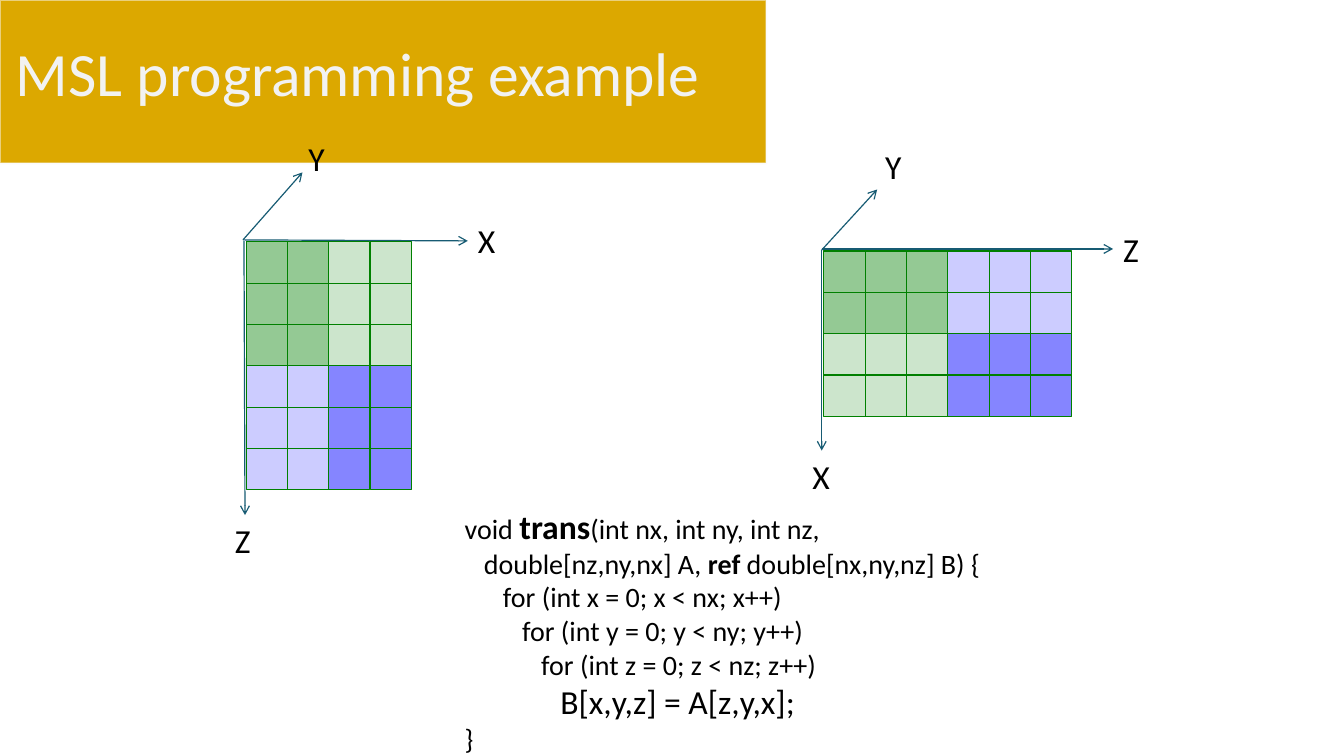
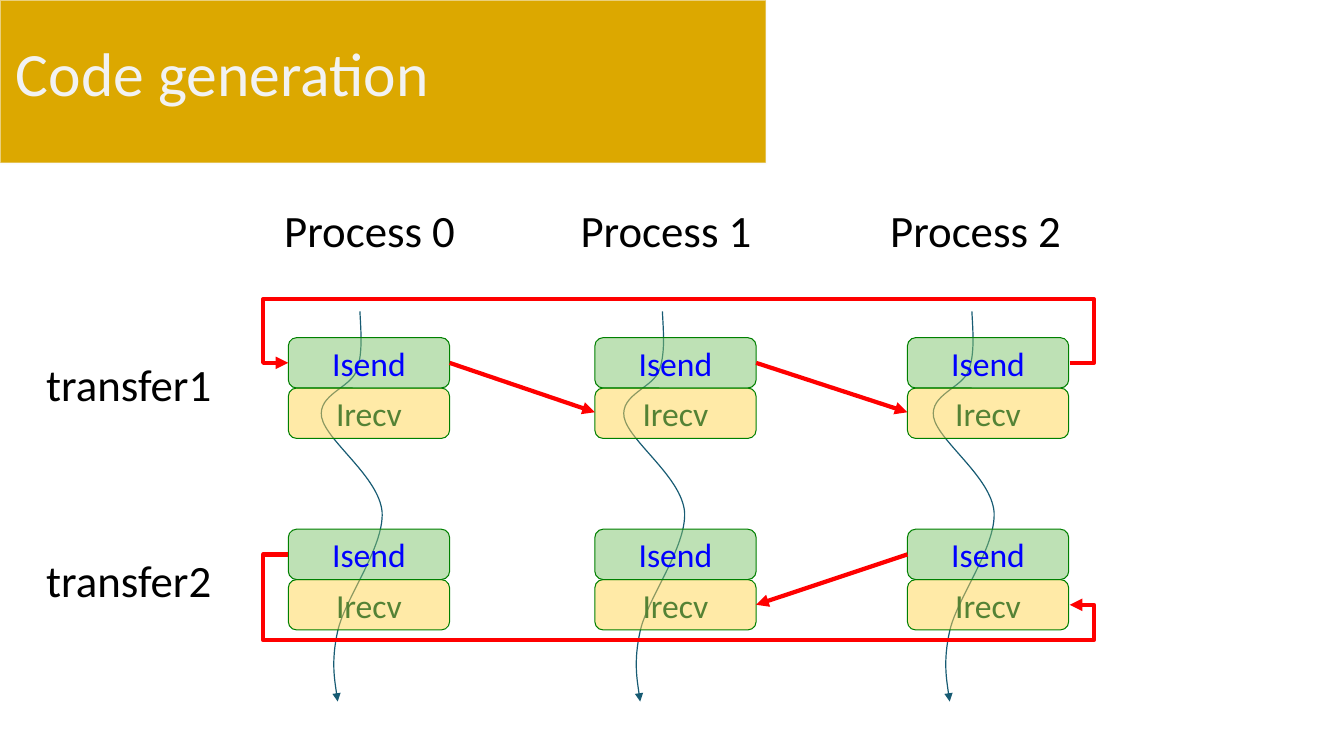
"""Build two slides: a matrix transposition example and its generated communication."""
from dataclasses import dataclass
from itertools import product

from lxml.etree import SubElement
from pptx import Presentation
from pptx.dml.color import RGBColor
from pptx.dml.line import LineFormat
from pptx.enum.shapes import MSO_CONNECTOR, MSO_SHAPE
from pptx.enum.text import MSO_ANCHOR, PP_ALIGN
from pptx.oxml.ns import qn
from pptx.presentation import Presentation as Deck
from pptx.shapes.autoshape import Shape
from pptx.slide import Slide
from pptx.text.text import TextFrame, _Paragraph
from pptx.util import Inches, Pt

GOLD = RGBColor(0xDC, 0xA8, 0x00)
BAND_EDGE = RGBColor(0xF9, 0xF9, 0xF9)
TITLE = RGBColor(0xF2, 0xF2, 0xF2)
WHITE = RGBColor(0xFF, 0xFF, 0xFF)
BLACK = RGBColor(0x00, 0x00, 0x00)
GREEN = RGBColor(0x00, 0x80, 0x00)
BLUE = RGBColor(0x00, 0x00, 0xFF)
TEAL = RGBColor(0x17, 0x5B, 0x73)
RED = RGBColor(0xFF, 0x00, 0x00)
SEND_FILL = RGBColor(0x7F, 0xC4, 0x6C)
RECV_FILL = RGBColor(0xFF, 0xD6, 0x51)
RECV_TEXT = RGBColor(0x54, 0x82, 0x35)

FONT = "Calibri"
CELL = 0.41
INDENT = 0.19
BOX_W, BOX_H = 1.6, 0.5
LOOP_LEFT, LOOP_RIGHT = 2.61, 10.85

Point = tuple[float, float]


@dataclass(frozen=True)
class Shade:
    """Fill colour with opacity in percent."""
    color: RGBColor
    opacity: int


@dataclass(frozen=True)
class Axis:
    """Labelled axis arrow; label is the top left corner of its text."""
    name: str
    start: Point
    end: Point
    label: Point


@dataclass(frozen=True)
class Matrix:
    """Two by two blocks of cells, each block with one shade."""
    left: float
    top: float
    block_cols: int
    block_rows: int
    shades: tuple[tuple[Shade, Shade], tuple[Shade, Shade]]
    axes: tuple[Axis, ...]


@dataclass(frozen=True)
class Span:
    """Piece of a text line with one format."""
    text: str
    size: int = 20
    bold: bool = False


@dataclass(frozen=True)
class Process:
    """Column of calls with its heading and thread curve."""
    label_left: float
    box_left: float
    curve_left: float


@dataclass(frozen=True)
class Call:
    """Kind of communication call."""
    name: str
    fill: RGBColor
    color: RGBColor


STRONG_GREEN, PALE_GREEN = Shade(GREEN, 42), Shade(GREEN, 20)
STRONG_BLUE, PALE_BLUE = Shade(BLUE, 48), Shade(BLUE, 20)

MATRICES = (
    Matrix(8.17, 2.49, 3, 2, ((STRONG_GREEN, PALE_BLUE), (PALE_GREEN, STRONG_BLUE)), (
        Axis("Z", (8.15, 2.47), (11.04, 2.47), (11.04, 2.22)),
        Axis("X", (8.15, 2.48), (8.15, 4.47), (7.96, 4.47)),
        Axis("Y", (8.15, 2.48), (8.7, 1.88), (8.68, 1.4)))),
    Matrix(2.44, 2.4, 2, 3, ((STRONG_GREEN, PALE_GREEN), (PALE_BLUE, STRONG_BLUE)), (
        Axis("X", (2.41, 2.38), (4.64, 2.39), (4.64, 2.13)),
        Axis("Z", (2.42, 2.39), (2.43, 5.11), (2.23, 5.11)),
        Axis("Y", (2.41, 2.38), (3, 1.71), (2.96, 1.32)))),
)

CODE = (
    (0, (Span("void "), Span("trans", 24, True), Span("(int nx, int ny, int nz,"))),
    (1, (Span("double[nz,ny,nx] A, "), Span("ref", bold=True), Span(" double[nx,ny,nz] B) {"))),
    (2, (Span("for (int x = 0; x < nx; x++)"),)),
    (3, (Span("for (int y = 0; y < ny; y++)"),)),
    (4, (Span("for (int z = 0; z < nz; z++)"),)),
    (5, (Span("B[x,y,z] = A[z,y,x];", 24),)),
    (0, (Span("}"),)),
)

PROCESSES = (Process(2.72, 2.86, 3.19), Process(5.66, 5.9, 6.19), Process(8.73, 9, 9.26))
CALLS = (Call("Isend", SEND_FILL, BLUE), Call("Irecv", RECV_FILL, RECV_TEXT))
TRANSFERS = (("transfer1", 3.49, 3.35), ("transfer2", 5.43, 5.25))

CURVE_TOP = 3.09
CURVE_START = (0.38, 0)
CURVE = (
    ((0.39, 0.2), (0.41, 0.41), (0.35, 0.58)),
    ((0.29, 0.76), (-0.04, 0.82), (0, 1.05)),
    ((0.05, 1.29), (0.57, 1.64), (0.6, 1.99)),
    ((0.62, 2.34), (0.23, 2.85), (0.16, 3.17)),
    ((0.09, 3.48), (0.16, 3.87), (0.16, 3.87)),
)

SEND_ARROWS = (((4.46, 3.6), (5.9, 4.09)), ((7.5, 3.6), (9, 4.09)), ((9, 5.5), (7.5, 6)))
LOOPS = (
    ((10.61, 3.6), (LOOP_RIGHT, 3.6), (LOOP_RIGHT, 2.97),
     (LOOP_LEFT, 2.97), (LOOP_LEFT, 3.6), (2.86, 3.6)),
    ((2.86, 5.5), (LOOP_LEFT, 5.5), (LOOP_LEFT, 6.35),
     (LOOP_RIGHT, 6.35), (LOOP_RIGHT, 6), (10.61, 6)),
)


def add_run(p: _Paragraph, text: str, size: int, color: RGBColor, bold: bool = False) -> None:
    """Append a formatted run."""
    r = p.add_run()
    r.text = text
    for key, value in {"name": FONT, "size": Pt(size), "bold": bold}.items():
        setattr(r.font, key, value)
    r.font.color.rgb = color


def add_text_frame(slide: Slide, left: float, top: float, width: float, height: float,
                   wrap: bool = True) -> TextFrame:
    """Add an empty text box and return its text frame."""
    tf = slide.shapes.add_textbox(*map(Inches, (left, top, width, height))).text_frame
    tf.word_wrap = wrap
    return tf


def set_line(line: LineFormat, color: RGBColor, width: float, arrow: str = "") -> None:
    """Set colour and width, with an arrowhead at the end if one is named."""
    line.color.rgb = color
    line.width = Pt(width)
    if arrow:
        SubElement(line._get_or_add_ln(), qn("a:tailEnd"), type=arrow)


def set_opacity(fill_parent, percent: int) -> None:
    """Set the opacity of the solid fill below an element."""
    clr = fill_parent.find(f"{qn('a:solidFill')}/{qn('a:srgbClr')}")
    SubElement(clr, qn("a:alpha"), val=str(percent * 1000))


def add_box(slide: Slide, kind: MSO_SHAPE, left: float, top: float, width: float,
            height: float, shade: Shade, edge: RGBColor, edge_width: float = 0.75) -> Shape:
    """Add a filled and outlined preset shape."""
    sp = slide.shapes.add_shape(kind, *map(Inches, (left, top, width, height)))
    sp.shadow.inherit = False
    sp.fill.solid()
    sp.fill.fore_color.rgb = shade.color
    if shade.opacity < 100:
        set_opacity(sp._element.spPr, shade.opacity)
    set_line(sp.line, edge, edge_width)
    return sp


def add_arrow(slide: Slide, start: Point, end: Point, color: RGBColor, width: float,
              arrow: str) -> None:
    """Add a straight arrow."""
    cx = slide.shapes.add_connector(MSO_CONNECTOR.STRAIGHT, *map(Inches, (*start, *end)))
    set_line(cx.line, color, width, arrow)
    SubElement(cx._element.spPr, qn("a:effectLst"))


def add_open_path(slide: Slide, points: list[Point], color: RGBColor, width: float) -> Shape:
    """Add an unfilled open path with an arrowhead at its end."""
    start, *rest = [(Inches(x), Inches(y)) for x, y in points]
    fb = slide.shapes.build_freeform(*start)
    fb.add_line_segments(rest, close=False)
    sp = fb.convert_to_shape()
    sp.shadow.inherit = False
    sp.fill.background()
    set_line(sp.line, color, width, "triangle")
    return sp


def add_thread(slide: Slide, left: float) -> None:
    """Add the curved thread of one process."""
    anchors = [CURVE_START, *(segment[-1] for segment in CURVE)]
    sp = add_open_path(slide, [(left + x, CURVE_TOP + y) for x, y in anchors], TEAL, 0.85)
    for ln_to, segment in zip(list(sp._element.iter(qn("a:lnTo"))), CURVE):
        ln_to.getparent().remove(ln_to_swap(ln_to, segment))


def ln_to_swap(ln_to, segment: tuple[Point, ...]):
    """Put a cubic curve before a straight segment and return the latter."""
    curve = ln_to.makeelement(qn("a:cubicBezTo"))
    for x, y in segment:
        SubElement(curve, qn("a:pt"), x=str(Inches(x)), y=str(Inches(y)))
    ln_to.addprevious(curve)
    return ln_to


def add_titled_slide(prs: Deck, title: str) -> Slide:
    """Add a blank slide with the title band."""
    slide = prs.slides.add_slide(prs.slide_layouts[6])
    slide.background.fill.solid()
    slide.background.fill.fore_color.rgb = WHITE
    band = add_box(slide, MSO_SHAPE.FLOWCHART_PROCESS, 0, 0, 7.6, 1.62,
                   Shade(GOLD, 100), BAND_EDGE, 1.35)
    set_opacity(band.line._get_or_add_ln(), 50)
    tf = add_text_frame(slide, 0.06, 0.03, 7.51, 1.45)
    tf.vertical_anchor = MSO_ANCHOR.MIDDLE
    tf.paragraphs[0].line_spacing = 0.9
    add_run(tf.paragraphs[0], title, 44, TITLE)
    return slide


def add_matrix(slide: Slide, matrix: Matrix) -> None:
    """Draw the axes and cells of a matrix."""
    for axis in matrix.axes:
        add_arrow(slide, axis.start, axis.end, TEAL, 0.85, "arrow")
        tf = add_text_frame(slide, *axis.label, 0.38, 0.5, wrap=False)
        add_run(tf.paragraphs[0], axis.name, 24, BLACK)
    for row, col in product(range(2 * matrix.block_rows), range(2 * matrix.block_cols)):
        shade = matrix.shades[row // matrix.block_rows][col // matrix.block_cols]
        add_box(slide, MSO_SHAPE.RECTANGLE, matrix.left + col * CELL, matrix.top + row * CELL,
                CELL, CELL, shade, GREEN)


def add_example_slide(prs: Deck) -> None:
    """Build the slide with two matrices and the code."""
    slide = add_titled_slide(prs, "MSL programming example")
    for matrix in MATRICES:
        add_matrix(slide, matrix)
    tf = add_text_frame(slide, 4.51, 4.97, 8.45, 2.59)
    for i, (level, spans) in enumerate(CODE):
        p = tf.add_paragraph() if i else tf.paragraphs[0]
        p._p.get_or_add_pPr().set("marL", str(Inches(level * INDENT)))
        for span in spans:
            add_run(p, span.text, span.size, BLACK, span.bold)


def add_label(slide: Slide, text: str, left: float, top: float) -> None:
    """Add a row or column heading."""
    tf = add_text_frame(slide, left, top, 1.95, 0.82)
    add_run(tf.paragraphs[0], text, 32, BLACK)


def add_generation_slide(prs: Deck) -> None:
    """Build the slide with processes, calls and messages."""
    slide = add_titled_slide(prs, "Code generation")
    for i, process in enumerate(PROCESSES):
        add_label(slide, f"Process {i}", process.label_left, 1.96)
        add_thread(slide, process.curve_left)
    for name, label_top, box_top in TRANSFERS:
        add_label(slide, name, 0.36, label_top)
        for process, (i, call) in product(PROCESSES, enumerate(CALLS)):
            sp = add_box(slide, MSO_SHAPE.ROUNDED_RECTANGLE, process.box_left,
                         box_top + i * BOX_H, BOX_W, BOX_H, Shade(call.fill, 50), GREEN)
            sp.text_frame.vertical_anchor = MSO_ANCHOR.MIDDLE
            p = sp.text_frame.paragraphs[0]
            p.alignment = PP_ALIGN.CENTER
            add_run(p, call.name, 24, call.color)
    for start, end in SEND_ARROWS:
        add_arrow(slide, start, end, RED, 3, "triangle")
    for loop in LOOPS:
        add_open_path(slide, list(loop), RED, 3)


def main() -> None:
    """Build and save the presentation."""
    prs = Presentation()
    prs.slide_width, prs.slide_height = Inches(13.33), Inches(7.5)
    add_example_slide(prs)
    add_generation_slide(prs)
    prs.save("out.pptx")


if __name__ == "__main__":
    main()
